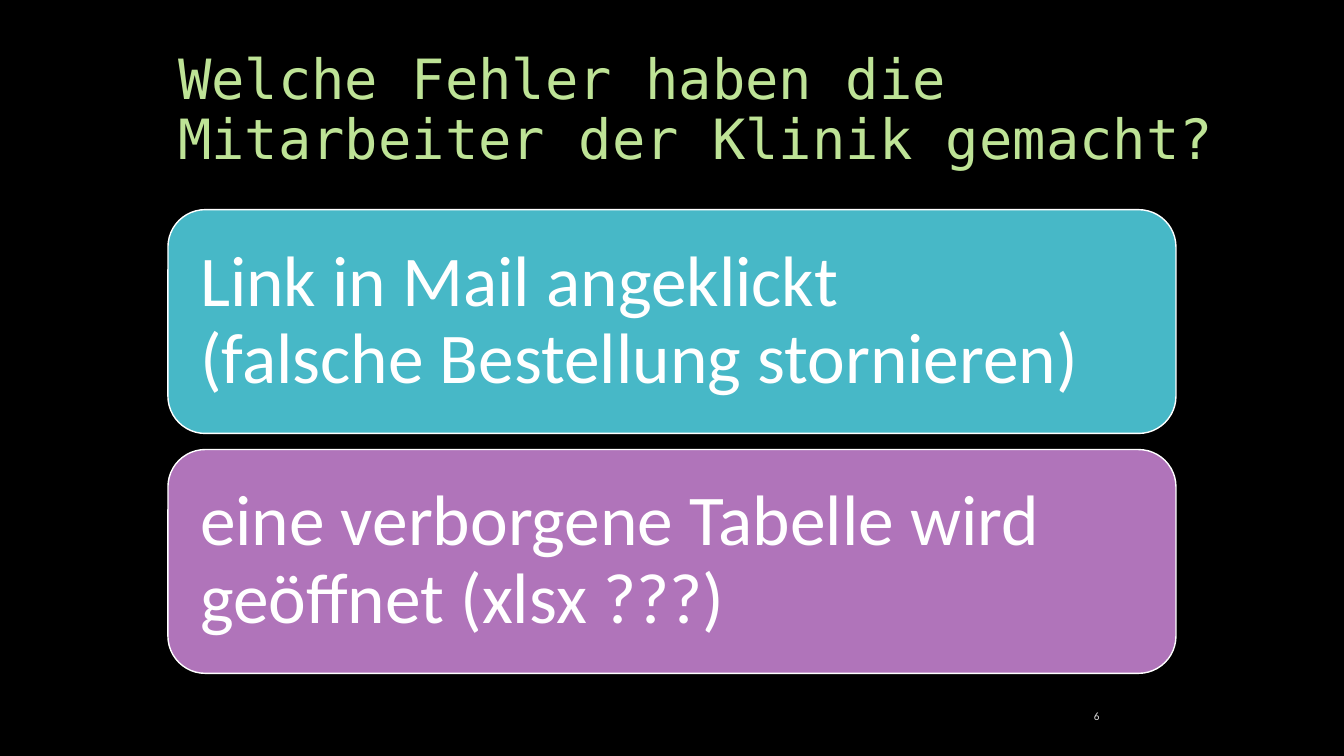
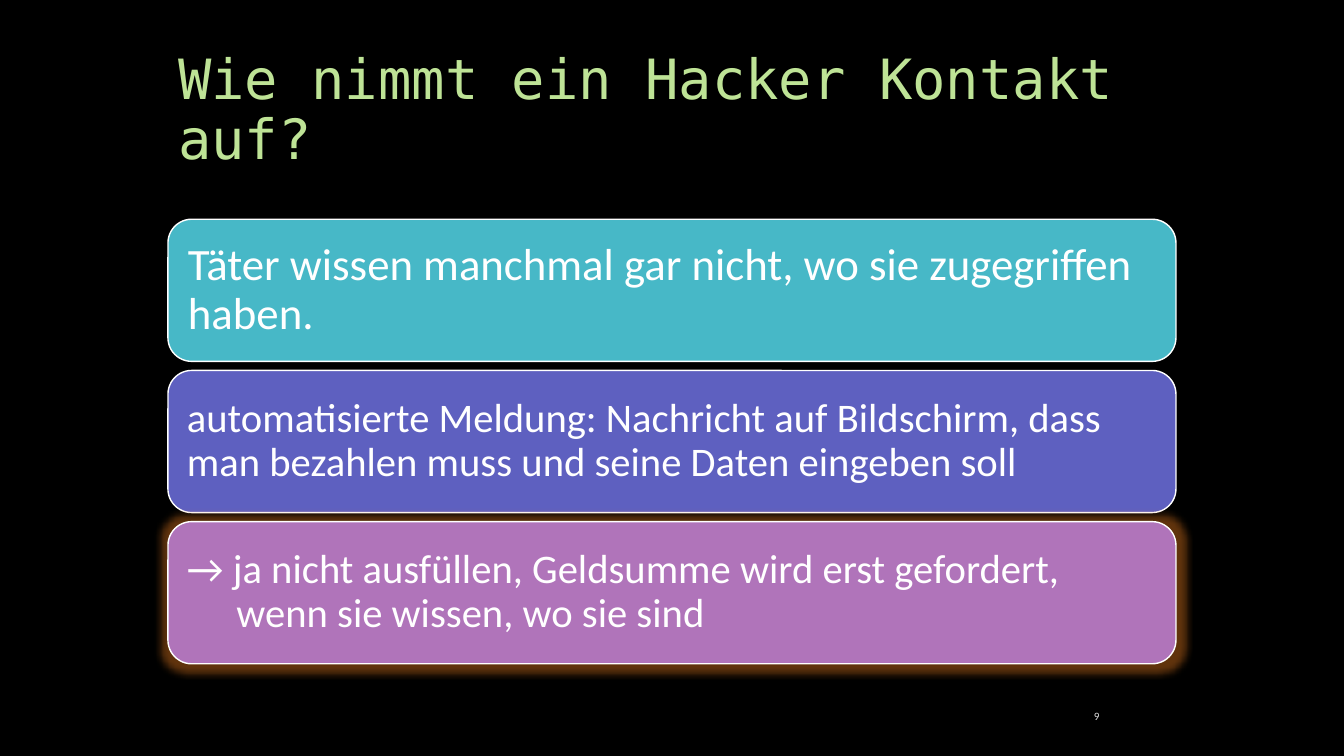
import pptx
import pptx.util
import pptx.dml.color
import pptx.enum.shapes
import pptx.enum.text
import pptx.oxml
import pptx.oxml.ns

TEAL, INDIGO, PURPLE = "47B8C7", "5E60C0", "B074BA"
WHITE, LIME, GREY, BLACK = "FFFFFF", "BEE396", "D9D9D9", "000000"
GLOW = (
    f'<a:glow {pptx.oxml.ns.nsdecls("a")} rad="139700">'
    '<a:srgbClr val="F08020"><a:alpha val="40000"/></a:srgbClr></a:glow>'
)


def colour(target, value):
    if hasattr(target, "solid"):
        target.solid()
        target = target.fore_color
    target.rgb = pptx.dml.color.RGBColor.from_string(value)


def write(frame, text, size, ink, font="Calibri", anchor="MIDDLE", spacing=1.0, inset=None, hanging=0):
    frame.word_wrap = True
    frame.auto_size = pptx.enum.text.MSO_AUTO_SIZE.NONE
    frame.vertical_anchor = pptx.enum.text.MSO_ANCHOR[anchor]
    if inset is not None:
        frame.margin_left = frame.margin_right = pptx.util.Inches(inset)
        frame.margin_top = frame.margin_bottom = pptx.util.Inches(inset)
    paragraph = frame.paragraphs[0]
    paragraph.text = text
    paragraph.alignment = pptx.enum.text.PP_ALIGN.LEFT
    paragraph.line_spacing = spacing
    if hanging:
        properties = paragraph._p.get_or_add_pPr()
        properties.set("marL", str(pptx.util.Inches(hanging)))
        properties.set("indent", str(-pptx.util.Inches(hanging)))
    for run in paragraph.runs:
        run.font.size = pptx.util.Pt(size)
        run.font.name = font
        colour(run.font.color, ink)


deck = pptx.Presentation()
deck.slide_width = pptx.util.Inches(13.33)
deck.slide_height = pptx.util.Inches(7.5)
colour(deck.slide_master.background.fill, BLACK)

left = deck.slide_width // 8
card_width = deck.slide_width * 3 // 4
stack_middle = pptx.util.Inches(4.38)

title_only = deck.slide_layouts[5]
heading = title_only.placeholders[0]
heading.left, heading.top = left, deck.slide_height // 15
heading.width, heading.height = pptx.util.Inches(10.75), deck.slide_height // 6

topics = [
    {
        "title": "Welche Fehler haben die Mitarbeiter der Klinik gemacht?",
        "number": "6",
        "card_height": 2.22,
        "gap": 0.16,
        "cards": [
            (TEAL, "Link in Mail angeklickt\n(falsche Bestellung stornieren)", 51, 0.21, 0, False),
            (PURPLE, "eine verborgene Tabelle wird geöffnet (xlsx ???)", 51, 0.21, 0, False),
        ],
    },
    {
        "title": "Wie nimmt ein Hacker Kontakt auf?",
        "number": "9",
        "card_height": 1.41,
        "gap": 0.09,
        "cards": [
            (TEAL, "Täter wissen manchmal gar nicht, wo sie zugegriffen haben.", 32, 0.13, 0, False),
            (INDIGO, "automatisierte Meldung: Nachricht auf Bildschirm, dass man bezahlen muss "
                     "und seine Daten eingeben soll", 29, 0.12, 0, False),
            (PURPLE, "→ ja nicht ausfüllen, Geldsumme wird erst gefordert, wenn sie wissen, "
                     "wo sie sind", 29, 0.12, 0.49, True),
        ],
    },
]

for topic in topics:
    slide = deck.slides.add_slide(title_only)
    write(slide.shapes.title.text_frame, topic["title"], 39.6, LIME,
          font="DejaVu Sans Mono", anchor="BOTTOM", spacing=0.9)

    card_height = pptx.util.Inches(topic["card_height"])
    pitch = card_height + pptx.util.Inches(topic["gap"])
    stack_top = stack_middle - (pitch * (len(topic["cards"]) - 1) + card_height) // 2
    for row, (fill, text, size, inset, hanging, glowing) in enumerate(topic["cards"]):
        card = slide.shapes.add_shape(
            pptx.enum.shapes.MSO_SHAPE.ROUNDED_RECTANGLE,
            left, stack_top + row * pitch, card_width, card_height)
        card.shadow.inherit = False
        colour(card.fill, fill)
        colour(card.line.fill, WHITE)
        card.line.width = pptx.util.Pt(1)
        write(card.text_frame, text, size, WHITE, spacing=0.9, inset=inset, hanging=hanging)
        if glowing:
            effects = card._element.spPr.find(pptx.oxml.ns.qn("a:effectLst"))
            effects.append(pptx.oxml.parse_xml(GLOW))

    page_number = slide.shapes.add_textbox(
        pptx.util.Inches(10.75), pptx.util.Inches(6.96),
        pptx.util.Inches(0.92), pptx.util.Inches(0.28))
    write(page_number.text_frame, topic["number"], 8, GREY)

deck.save("out.pptx")
